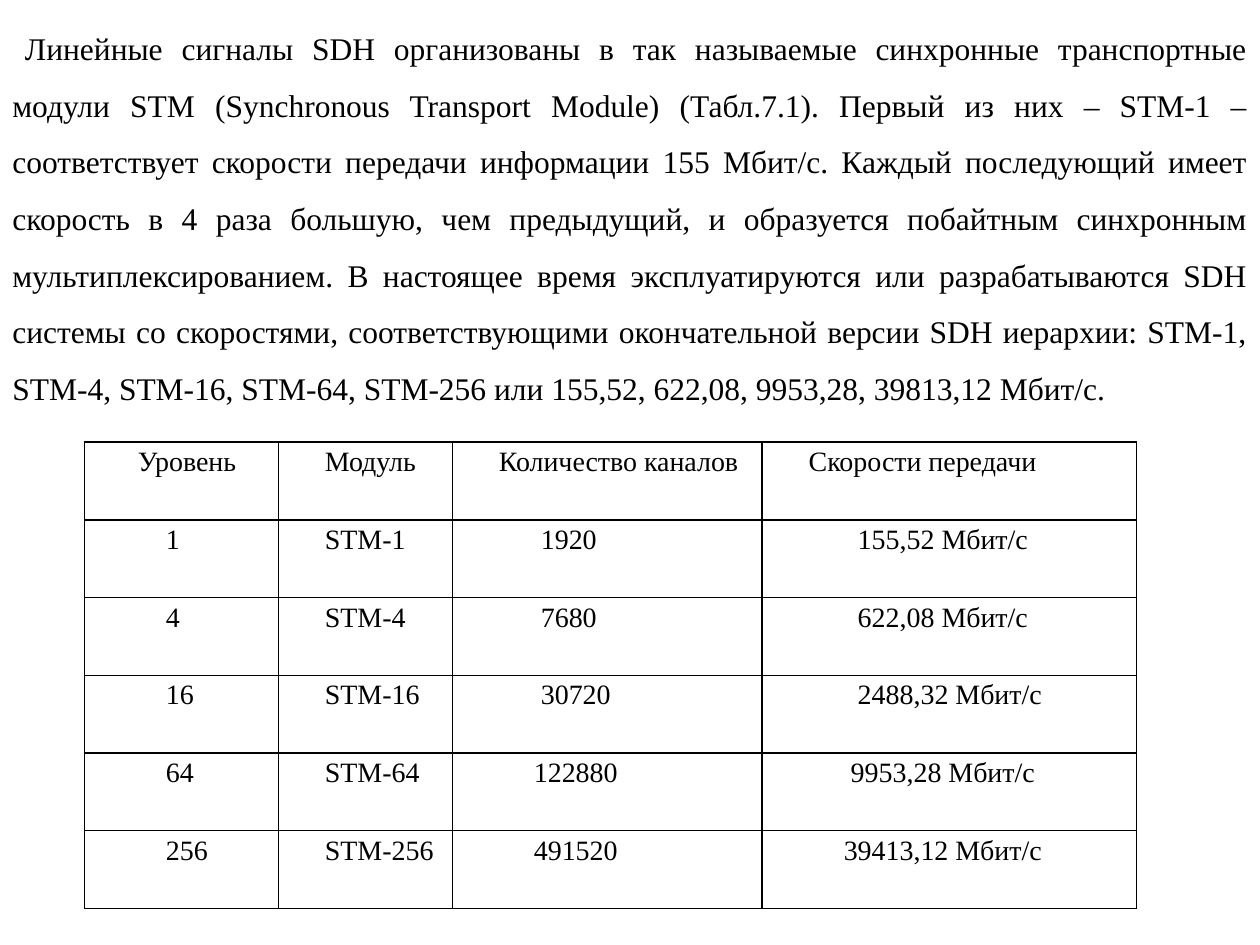
from lxml.etree import SubElement
from pptx import Presentation
from pptx.dml.color import RGBColor
from pptx.enum.text import MSO_ANCHOR, PP_ALIGN
from pptx.oxml.ns import qn
from pptx.util import Pt

COLORS = {"text": "000000", "border": "000000"}
FONT = "Times New Roman"
INTRODUCTION = (
    "Линейные сигналы SDH организованы в так называемые синхронные транспортные модули "
    "STM (Synchronous Transport Module) (Табл.7.1). Первый из них – STM-1 – соответствует "
    "скорости передачи информации 155 Мбит/с. Каждый последующий имеет скорость в 4 раза "
    "большую, чем предыдущий, и образуется побайтным синхронным мультиплексированием. "
    "В настоящее время эксплуатируются или разрабатываются SDH системы со скоростями, "
    "соответствующими окончательной версии SDH иерархии: STM-1, STM-4, STM-16, STM-64, "
    "STM-256 или 155,52, 622,08, 9953,28, 39813,12 Мбит/с."
)
HEADERS = ["Уровень", "Модуль", "Количество каналов", "Скорости передачи"]
MODULES = [
    ("1", "1920", "155,52"),
    ("4", "7680", "622,08"),
    ("16", "30720", "2488,32"),
    ("64", "122880", "9953,28"),
    ("256", "491520", "39413,12"),
]
COLUMN_WIDTHS = [110.9, 99.4, 177.1, 213.8]
ROW_HEIGHT = 44.4
HEADER_INDENTS = [25.6, 21.6, 21.6, 21.6]
BODY_INDENTS = [41.6, 21.6, 45.6, 49.6]
SHIFTED_INDENTS = {"122880": 41.6, "491520": 41.6,
                   "9953,28 Мбит/с": 45.6, "39413,12 Мбит/с": 41.6}


def write_paragraph(text_frame, text, size, indent, spacing):
    paragraph = text_frame.paragraphs[0]
    paragraph.alignment = PP_ALIGN.JUSTIFY
    paragraph.line_spacing = spacing
    properties = paragraph._p.get_or_add_pPr()
    properties.set("marL", "0")
    properties.set("indent", str(Pt(indent)))
    run = paragraph.add_run()
    run.text = text
    run.font.name = FONT
    run.font.size = Pt(size)
    run.font.color.rgb = RGBColor.from_string(COLORS["text"])


def add_introduction(slide):
    shape = slide.shapes.add_textbox(Pt(0), Pt(2.2), Pt(720), Pt(232.6))
    shape.text_frame.word_wrap = True
    write_paragraph(shape.text_frame, INTRODUCTION, 18, 7.2, 1.5)


def add_borders(cell):
    properties = cell._tc.get_or_add_tcPr()
    for side in ("a:lnL", "a:lnR", "a:lnT", "a:lnB"):
        line = SubElement(properties, qn(side), w=str(Pt(1)))
        fill = SubElement(line, qn("a:solidFill"))
        SubElement(fill, qn("a:srgbClr"), val=COLORS["border"])


def fill_cell(cell, text, indent):
    add_borders(cell)
    cell.fill.background()
    cell.margin_left = cell.margin_right = Pt(5)
    cell.margin_top = cell.margin_bottom = Pt(0)
    cell.vertical_anchor = MSO_ANCHOR.TOP
    write_paragraph(cell.text_frame, text, 16, indent, 1.15)


def add_module_table(slide):
    rows = [HEADERS] + [
        [level, f"STM-{level}", channels, f"{rate} Мбит/с"]
        for level, channels, rate in MODULES
    ]
    table = slide.shapes.add_table(
        len(rows), len(HEADERS), Pt(48.2), Pt(252.7),
        Pt(sum(COLUMN_WIDTHS)), Pt(ROW_HEIGHT * len(rows)),
    ).table
    table.first_row = False
    table.horz_banding = False
    for column, width in zip(table.columns, COLUMN_WIDTHS):
        column.width = Pt(width)
    for row_index, texts in enumerate(rows):
        table.rows[row_index].height = Pt(ROW_HEIGHT)
        indents = BODY_INDENTS if row_index else HEADER_INDENTS
        for column_index, (text, indent) in enumerate(zip(texts, indents)):
            fill_cell(table.cell(row_index, column_index), text,
                      SHIFTED_INDENTS.get(text, indent))


def main():
    presentation = Presentation()
    presentation.slide_width = Pt(720)
    presentation.slide_height = Pt(540)
    slide = presentation.slides.add_slide(presentation.slide_layouts[6])
    add_introduction(slide)
    add_module_table(slide)
    presentation.save("out.pptx")


if __name__ == "__main__":
    main()
